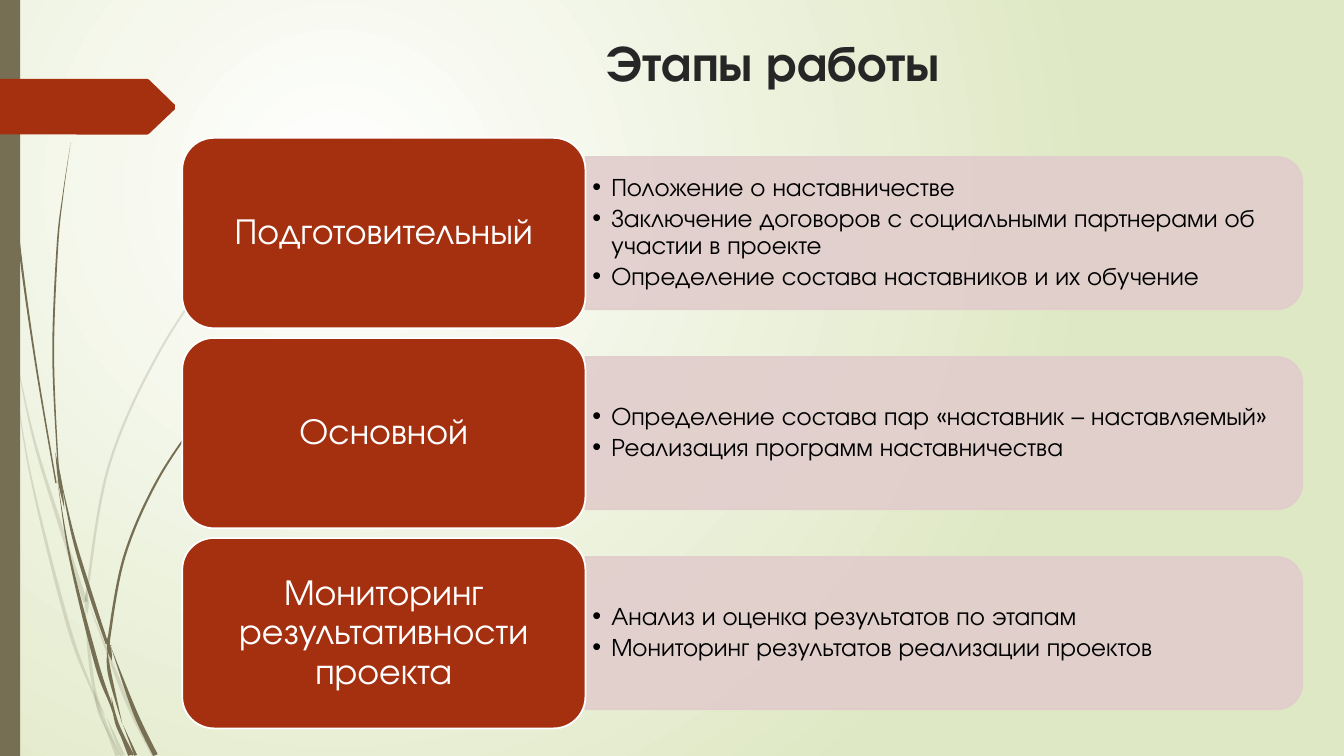
import math
import pptx
import pptx.dml.color
import pptx.enum.shapes
import pptx.enum.text
import pptx.oxml.ns
import pptx.util
from lxml import etree

Pt = pptx.util.Pt
RGBColor = pptx.dml.color.RGBColor
PRESET = pptx.enum.shapes.MSO_SHAPE
ANCHOR = pptx.enum.text.MSO_ANCHOR
ALIGN = pptx.enum.text.PP_ALIGN
qn = pptx.oxml.ns.qn

FONT = "TeX Gyre Adventor"
WHITE = RGBColor(0xFF, 0xFF, 0xFF)
BLACK = RGBColor(0x00, 0x00, 0x00)
CHARCOAL = RGBColor(0x26, 0x26, 0x26)
RUST = RGBColor(0xA5, 0x30, 0x10)
ROSE = RGBColor(0xE1, 0xCD, 0xCC)
OLIVE = RGBColor(0x76, 0x6F, 0x54)
PALE_GREEN = RGBColor(0xDF, 0xE8, 0xC4)

PAGE_WIDTH, PAGE_HEIGHT = 960, 540

# Stretches of grass: widths at start, middle and end, then the centre line
PALE_GRASS = [
    ((2, 2, 0.5), [(1, 204), (6, 232), (8, 252)]),
    ((0, 2.5, 3), [(10, 248), (24, 313), (43, 375), (61, 430)]),
    ((0, 3, 3.5), [(63, 430), (90, 499), (110, 540)]),
    ((0, 2, 3.5), [(76, 512), (87.5, 540)]),
    ((0, 2.5, 0), [(8, 252), (21.5, 338), (48.5, 446), (66.5, 495), (73, 514)]),
    ((0, 3, 0), [(60.5, 431), (63.5, 465), (68, 495), (75.5, 512)]),
    ((0, 1.5, 2), [(224.5, 110), (193, 142), (164.5, 176), (114, 251),
                   (78, 332), (62.5, 420), (62.5, 429)]),
    ((0, 2, 3.5), [(73, 514), (84, 540)]),
    ((0, 2.8, 0), [(62, 422), (62, 431), (62.5, 439)]),
    ((0, 3, 0), [(67, 492), (72, 510), (86, 540)]),
]
DARK_GRASS = [
    ((0.5, 1.5, 1), [(2.5, 0), (5.5, 79), (13, 168), (25, 256), (40, 345)]),
    ((0, 3, 2), [(43, 340), (52.5, 384), (65, 425.5), (76.5, 460)]),
    ((0, 3, 3.5), [(79, 461.5), (96.5, 509), (111, 539.5)]),
    ((0, 3, 0), [(41, 343), (50.5, 401), (69, 474), (79.5, 504), (84, 520)]),
    ((0, 1.5, 0.5), [(50.5, 101.5), (45, 139), (41, 176), (38, 251),
                     (41, 324), (43, 340)]),
    ((0, 1, 2), [(88, 518), (97, 539.5)]),
    ((0, 2.5, 0), [(39.5, 323), (43, 345), (46, 363.5)]),
    ((0, 1.5, 2), [(187, 248), (166, 269), (147, 292), (113, 342),
                   (89, 397), (78, 455), (79, 461)]),
    ((0, 2, 3), [(84, 520), (93, 539.5)]),
    ((0, 2.5, 0), [(76.5, 464), (78.5, 482), (87.5, 517.5)]),
    ((0, 3, 0), [(76.5, 455), (78, 464), (80, 472)]),
    ((0, 2.5, 1.5), [(79.5, 498), (84, 518), (95, 539.5)]),
]
RIBBON = [(0, 56.3), (105, 56.3), (106.5, 57), (125, 75), (125, 78),
          (106.5, 95.5), (105, 96.2), (0, 96)]

STAGES = [
    ("Подготовительный", [
        "Положение о наставничестве",
        "Заключение договоров с социальными партнерами об участии в проекте",
        "Определение состава наставников и их обучение"]),
    ("Основной", [
        "Определение состава пар «наставник – наставляемый»",
        "Реализация программ наставничества"]),
    ("Мониторинг результативности проекта", [
        "Анализ и оценка результатов по этапам",
        "Мониторинг результатов реализации проектов"]),
]


def set_values(target, values):
    for name, value in values.items():
        setattr(target, name, value)


def place(shape, left, top, width, height):
    set_values(shape, {"left": Pt(left), "top": Pt(top),
                       "width": Pt(width), "height": Pt(height)})


def paint(shape, color, line=None, opacity=100):
    shape.shadow.inherit = False
    shape.fill.solid()
    shape.fill.fore_color.rgb = color
    if line is None:
        shape.line.fill.background()
    else:
        shape.line.color.rgb = line
        shape.line.width = Pt(1.25)
    if opacity < 100:
        for tint in shape._element.spPr.iter(qn("a:srgbClr")):
            etree.SubElement(tint, qn("a:alpha"), val=str(opacity * 1000))


def write(frame, lines, font, para_format, frame_format):
    set_values(frame, {"word_wrap": True,
                       "auto_size": pptx.enum.text.MSO_AUTO_SIZE.NONE,
                       **frame_format})
    for index, line in enumerate(lines):
        para = frame.paragraphs[0] if index == 0 else frame.add_paragraph()
        set_values(para, {"space_before": Pt(0), **para_format})
        span = para.add_run()
        span.text = line
        set_values(span.font, {"name": FONT, "bold": font.get("bold", False),
                               "size": font["size"]})
        span.font.color.rgb = font["color"]


def add_outline(page, points):
    corners = [(Pt(x), Pt(y)) for x, y in points]
    builder = page.shapes.build_freeform(*corners[0])
    builder.add_line_segments(corners[1:], close=True)
    return builder.convert_to_shape()


def curve_through(points):
    """Two handles and an end point for each step of a smooth curve."""
    padded = [points[0], *points, points[-1]]
    curve = []
    for a, b, c, d in zip(padded, padded[1:], padded[2:], padded[3:]):
        curve += [(b[0] + (c[0] - a[0]) / 6, b[1] + (c[1] - a[1]) / 6),
                  (c[0] - (d[0] - b[0]) / 6, c[1] - (d[1] - b[1]) / 6), c]
    return curve


def add_blade(page, opacity, widths, points):
    last = len(points) - 1
    left_edge, right_edge = [], []
    for index, (x, y) in enumerate(points):
        before, after = points[max(index - 1, 0)], points[min(index + 1, last)]
        dx, dy = after[0] - before[0], after[1] - before[1]
        along = 2 * index / last
        part = min(int(along), 1)
        width = widths[part] + (widths[part + 1] - widths[part]) * (along - part)
        reach = width / 2 / math.hypot(dx, dy)
        left_edge.append((x - dy * reach, min(y + dx * reach, PAGE_HEIGHT)))
        right_edge.insert(0, (x + dy * reach, min(y - dx * reach, PAGE_HEIGHT)))
    tip = [left_edge[-1], right_edge[0], right_edge[0]]
    blade = add_outline(page, [left_edge[0], *curve_through(left_edge), *tip,
                               *curve_through(right_edge)])
    # Every three points make one curve
    steps = list(blade._element.iter(qn("a:lnTo")))
    for first in range(0, len(steps) - 2, 3):
        bend = etree.Element(qn("a:cubicBezTo"))
        steps[first].addprevious(bend)
        for step in steps[first:first + 3]:
            bend.append(step[0])
            step.getparent().remove(step)
    paint(blade, OLIVE, opacity=opacity)


def add_backdrop(page):
    # Radial gradient centred in the upper left
    fill = page.background.fill
    fill.gradient()
    for stop, color in zip(fill.gradient_stops, (WHITE, PALE_GREEN)):
        stop.color.rgb = color
    gradient = page._element.find(".//" + qn("a:gradFill"))
    gradient.remove(gradient.find(qn("a:lin")))
    circle = etree.Element(qn("a:path"), path="circle")
    etree.SubElement(circle, qn("a:fillToRect"),
                     l="50000", t="50000", r="100000", b="100000")
    gradient.find(qn("a:gsLst")).addnext(circle)
    # Grass, side bar and ribbon
    for opacity, grass in ((20, PALE_GRASS), (100, DARK_GRASS)):
        for widths, points in grass:
            add_blade(page, opacity, widths, points)
    bar = page.shapes.add_shape(PRESET.RECTANGLE, 0, 0, Pt(14.4), Pt(PAGE_HEIGHT))
    paint(bar, OLIVE)
    paint(add_outline(page, RIBBON), RUST)


def add_stage(page, body, name, tasks, left, top, width, height):
    card_width = 288
    panel_left, panel_width = left + card_width, width - card_width
    panel_height = 0.8 * height
    middle = top + height / 2
    # Panel: an upright shape turned so that its round corners face right
    panel = page.shapes.add_shape(PRESET.ROUND_2_SAME_RECTANGLE, 0, 0, 0, 0)
    place(panel, panel_left + (panel_width - panel_height) / 2,
          middle - panel_width / 2, panel_height, panel_width)
    panel.rotation = 90
    paint(panel, ROSE, ROSE, 90)
    # Task list, brought above the panel
    page.shapes._spTree.append(body._element)
    place(body, panel_left, middle - 49, panel_width - 6, 98)
    write(body.text_frame, tasks, {"size": Pt(18), "color": BLACK},
          {"line_spacing": 0.9, "space_after": Pt(2.7), "alignment": ALIGN.LEFT},
          {"vertical_anchor": ANCHOR.MIDDLE, "margin_left": Pt(5),
           "margin_right": Pt(5), "margin_top": Pt(3), "margin_bottom": Pt(3)})
    for para in body.text_frame.paragraphs:
        properties = para._p.get_or_add_pPr()
        properties.set("marL", str(Pt(13.5)))
        properties.set("indent", str(-Pt(13.5)))
        etree.SubElement(properties, qn("a:buChar"), char="•")
    # Stage card
    card = page.shapes.add_shape(PRESET.ROUNDED_RECTANGLE, 0, 0, 0, 0)
    place(card, left, top, card_width, height)
    paint(card, RUST, WHITE)
    write(card.text_frame, [name], {"size": Pt(26), "color": WHITE},
          {"line_spacing": 0.9, "alignment": ALIGN.CENTER},
          {"vertical_anchor": ANCHOR.MIDDLE,
           "margin_left": Pt(8), "margin_right": Pt(8)})


def add_stages_page(deck):
    page = deck.slides.add_slide(deck.slide_layouts.get_by_name("Comparison"))
    title, *bodies = [holder for holder in page.placeholders
                      if holder.placeholder_format.idx < 10]
    add_backdrop(page)
    # Title
    page.shapes._spTree.append(title._element)
    place(title, 201.5, 18.5, 702, 101)
    write(title.text_frame, ["Этапы работы"],
          {"size": Pt(36), "color": CHARCOAL, "bold": True},
          {"alignment": ALIGN.CENTER}, {"vertical_anchor": ANCHOR.TOP})
    # Stages, evenly stacked
    for index, (name, tasks) in enumerate(STAGES):
        add_stage(page, bodies[index], name, tasks,
                  130.2, 98.5 + 142.9 * index, 800, 136)
    for spare in bodies[len(STAGES):]:
        spare._element.getparent().remove(spare._element)


deck = pptx.Presentation()
deck.slide_width, deck.slide_height = Pt(PAGE_WIDTH), Pt(PAGE_HEIGHT)
add_stages_page(deck)
deck.save("out.pptx")
